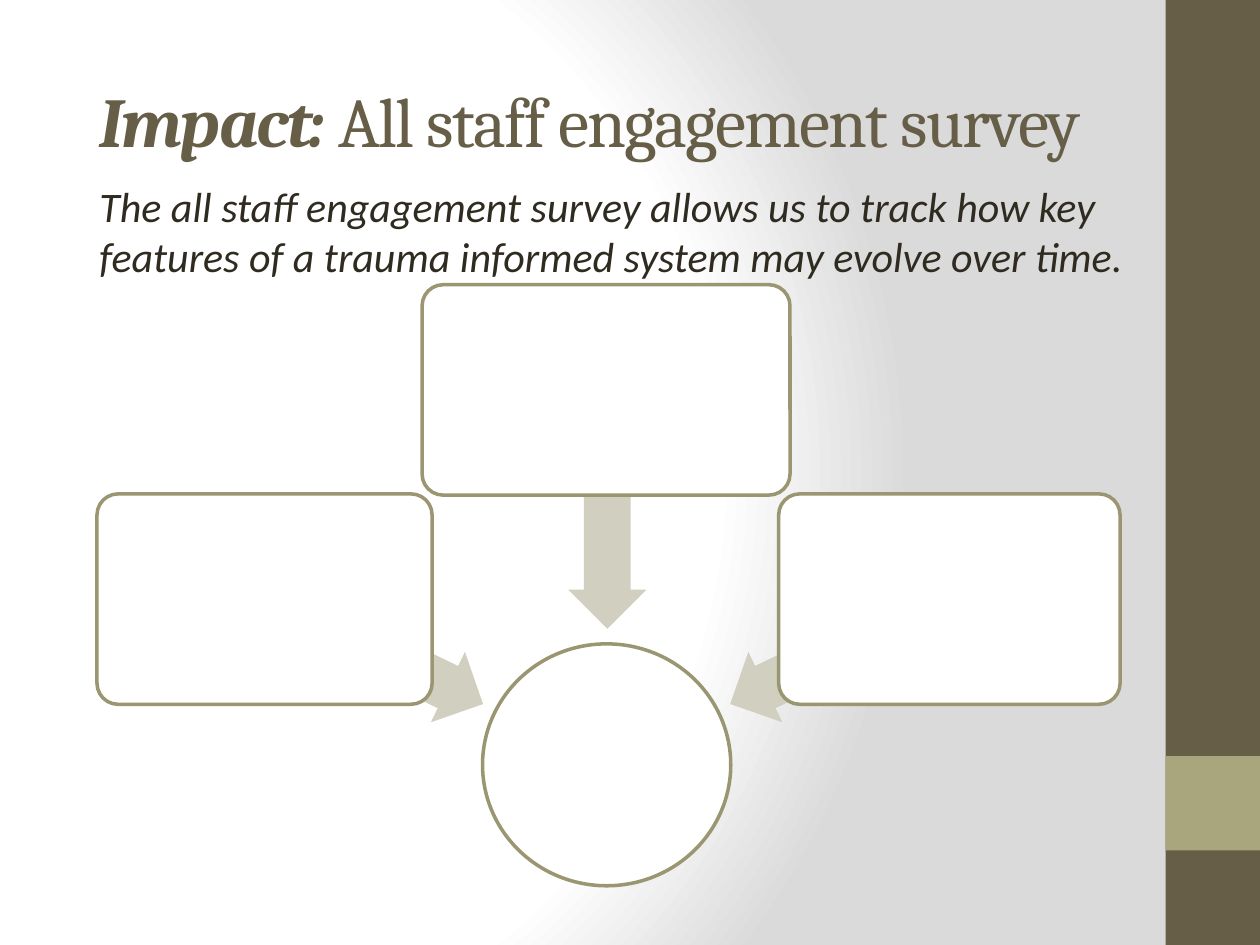
from pptx import Presentation
from pptx.dml.color import RGBColor
from pptx.enum.shapes import MSO_SHAPE as SHAPE
from pptx.enum.text import MSO_ANCHOR as ANCHOR
from pptx.oxml import parse_xml
from pptx.oxml.ns import nsdecls, qn
from pptx.util import Inches, Pt

BROWN, OLIVE, OUTLINE, ARROW = "675E47", "A9A57C", "999671", "D1CFBF"
WHITE, INK, GREY = "FFFFFF", "2F2B20", "DADADA"

TITLE = [("Impact:", True), (" All staff engagement survey", False)]
INTRO = ("The all staff engagement survey allows us to track how key "
         "features of a trauma informed system may evolve over time.")

SIDEBAR = [((9.25, 0, 0.75, 7.5), BROWN), ((9.25, 6, 0.75, 0.75), OLIVE)]
HUB = (3.83, 5.11, 1.97, 1.92)
ARROW_HEIGHT, BOX_HEIGHT = 0.62, 1.67
# arrow (left, top, width, rotation), box (left, top, width)
SPOKES = [
    ((2.01, 4.86, 1.92, 205.8), (0.77, 3.92, 2.66)),
    ((3.87, 3.73, 1.9, 270), (3.35, 2.26, 2.92)),
    ((5.7, 4.86, 1.92, 334.2), (6.18, 3.92, 2.71)),
]
GRADIENT_STOPS = [(0, WHITE), (75, WHITE), (100, GREY)]


def rgb(color):
    return RGBColor.from_string(color)


def add_part(kind, place, fill, line=None, adjust=()):
    part = slide.shapes.add_shape(kind, *map(Inches, place))
    part.shadow.inherit = False
    part.fill.solid()
    part.fill.fore_color.rgb = rgb(fill)
    if line:
        part.line.color.rgb = rgb(line)
        part.line.width = Pt(2)
    else:
        part.line.fill.background()
    for index, value in enumerate(adjust):
        part.adjustments[index] = value
    return part


def add_paragraph(place, font_name, size, color, anchor):
    frame = slide.shapes.add_textbox(*map(Inches, place)).text_frame
    frame.word_wrap = True
    frame.vertical_anchor = anchor
    paragraph = frame.paragraphs[0]
    paragraph.font.name = font_name
    paragraph.font.size = Pt(size)
    paragraph.font.color.rgb = rgb(color)
    return paragraph


prs = Presentation()
prs.slide_width, prs.slide_height = Inches(10), Inches(7.5)
slide = prs.slides.add_slide(prs.slide_layouts[6])

# Background: circular gradient
slide.background.fill.solid()
background = slide.element.find(".//" + qn("p:bgPr"))
stops = "".join(f'<a:gs pos="{pos * 1000}"><a:srgbClr val="{color}"/></a:gs>'
                for pos, color in GRADIENT_STOPS)
background.replace(background[0], parse_xml(
    f'<a:gradFill {nsdecls("a")} rotWithShape="1"><a:gsLst>{stops}</a:gsLst>'
    '<a:path path="circle"><a:fillToRect l="20000" t="50000" r="100000" b="50000"/>'
    '</a:path></a:gradFill>'))

# Sidebar
for place, color in SIDEBAR:
    add_part(SHAPE.RECTANGLE, place, color)

# Title and introduction
title = add_paragraph((0.69, 0.4, 8.62, 1.09), "Cambria", 40, BROWN, ANCHOR.MIDDLE)
for text, emphasis in TITLE:
    run = title.add_run()
    run.text = text
    run.font.bold = run.font.italic = emphasis
    run.font._element.set("spc", "-100")

intro = add_paragraph((0.69, 1.38, 8.62, 5.38), "Calibri", 24, INK, ANCHOR.TOP)
intro.text = INTRO
intro.font.italic = True
intro.space_before = Pt(4.8)

# Hub with three boxes pointing to it
add_part(SHAPE.OVAL, HUB, WHITE, OUTLINE)
for (*arrow_place, rotation), box_place in SPOKES:
    arrow = add_part(SHAPE.LEFT_ARROW, (*arrow_place, ARROW_HEIGHT), ARROW,
                     adjust=(0.6, 0.5))
    arrow.rotation = rotation
    add_part(SHAPE.ROUNDED_RECTANGLE, (*box_place, BOX_HEIGHT), WHITE, OUTLINE,
             adjust=(0.1,))

prs.save("out.pptx")
